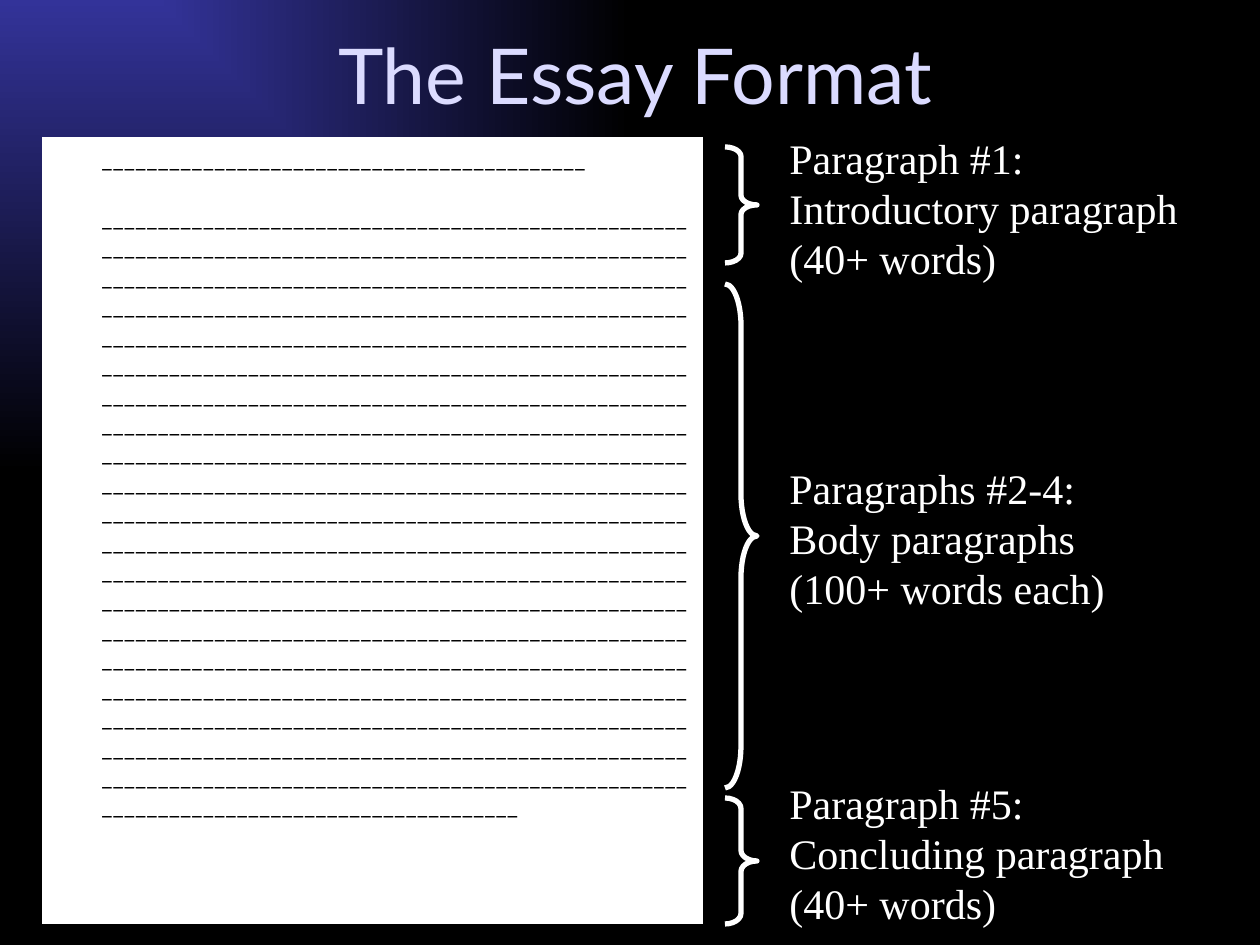
from pptx import Presentation
from pptx.dml.color import RGBColor
from pptx.enum.shapes import MSO_SHAPE
from pptx.enum.text import MSO_ANCHOR, PP_ALIGN
from pptx.oxml import parse_xml
from pptx.oxml.ns import nsdecls, qn
from pptx.util import Emu, Pt

EMU_PER_PX = 914400 / 126
WHITE = "FFFFFF"
# Left, top, width, height in px
TITLE_BOX = (42, 32, 1187, 84)
PAGE_BOX = (42, 137, 661, 787)
BRACE_LEFT, BRACE_WIDTH = 725, 32
LABEL_LEFT, LABEL_WIDTH, LABEL_HEIGHT = 777, 451, 164

# Brace top, brace height, label top, label lines
SECTIONS = [
    (147, 116, 126, ["Paragraph #1:", "Introductory paragraph", "(40+ words)"]),
    (284, 504, 456, ["Paragraphs #2-4:", "Body paragraphs", "(100+ words each)"]),
    (798, 126, 771, ["Paragraph #5:", "Concluding paragraph", "(40+ words)"]),
]
# Underscores in the heading line and in the essay text (20 full lines and a rest)
BLANK_COUNTS = [43, 20 * 52 + 37]


def px(length):
    return Emu(round(length * EMU_PER_PX))


def color(hex_string):
    return RGBColor.from_string(hex_string)


def write_paragraphs(text_frame, lines, font_name, size, hex_string,
                     alignment=PP_ALIGN.LEFT):
    text_frame.word_wrap = True
    for index, line in enumerate(lines):
        paragraph = text_frame.add_paragraph() if index else text_frame.paragraphs[0]
        paragraph.alignment = alignment
        run = paragraph.add_run()
        run.text = line
        run.font.name = font_name
        run.font.size = Pt(size)
        run.font.color.rgb = color(hex_string)


def add_background(slide):
    fill = slide.background.fill
    fill.gradient()
    for stop, hex_string in zip(fill.gradient_stops, ["333399", "000000"]):
        stop.color.rgb = color(hex_string)
    # Spread the gradient from the top left corner
    gradient = slide.element.find(".//" + qn("a:gradFill"))
    gradient.replace(gradient.find(qn("a:lin")), parse_xml(
        f'<a:path {nsdecls("a")} path="rect">'
        '<a:fillToRect r="100000" b="100000"/></a:path>'))


def add_title(slide, box):
    text_frame = slide.shapes.add_textbox(*map(px, box)).text_frame
    text_frame.vertical_anchor = MSO_ANCHOR.MIDDLE
    write_paragraphs(text_frame, ["The Essay Format"], "Lato", 44, "DBDBFF",
                     PP_ALIGN.CENTER)


def add_essay_page(slide, box):
    page = slide.shapes.add_shape(MSO_SHAPE.RECTANGLE, *map(px, box))
    page.shadow.inherit = False
    page.fill.solid()
    page.fill.fore_color.rgb = color(WHITE)
    page.line.fill.background()
    text_frame = page.text_frame
    text_frame.vertical_anchor = MSO_ANCHOR.TOP
    write_paragraphs(text_frame, ["\t" + "_" * count for count in BLANK_COUNTS],
                     "Lato", 14, "000000")
    # Hanging indent
    for paragraph in text_frame.paragraphs:
        properties = paragraph._p.get_or_add_pPr()
        properties.set("marL", str(px(47)))
        properties.set("indent", str(-px(47)))


def add_brace(slide, box):
    brace = slide.shapes.add_shape(MSO_SHAPE.RIGHT_BRACE, *map(px, box))
    brace.shadow.inherit = False
    brace.fill.background()
    brace.line.color.rgb = color(WHITE)
    brace.line.width = Pt(3)
    # Curl grows with the height of the brace
    width, height = box[2:]
    brace.adjustments[0] = round(height / width / 12, 2)


def add_label(slide, box, lines):
    text_frame = slide.shapes.add_textbox(*map(px, box)).text_frame
    write_paragraphs(text_frame, lines, "Times New Roman", 24, WHITE)


def main():
    presentation = Presentation()
    presentation.slide_width, presentation.slide_height = px(1260), px(945)
    slide = presentation.slides.add_slide(presentation.slide_layouts[6])
    add_background(slide)
    add_title(slide, TITLE_BOX)
    add_essay_page(slide, PAGE_BOX)
    for brace_top, brace_height, label_top, lines in SECTIONS:
        add_brace(slide, (BRACE_LEFT, brace_top, BRACE_WIDTH, brace_height))
        add_label(slide, (LABEL_LEFT, label_top, LABEL_WIDTH, LABEL_HEIGHT), lines)
    presentation.save("out.pptx")


if __name__ == "__main__":
    main()
